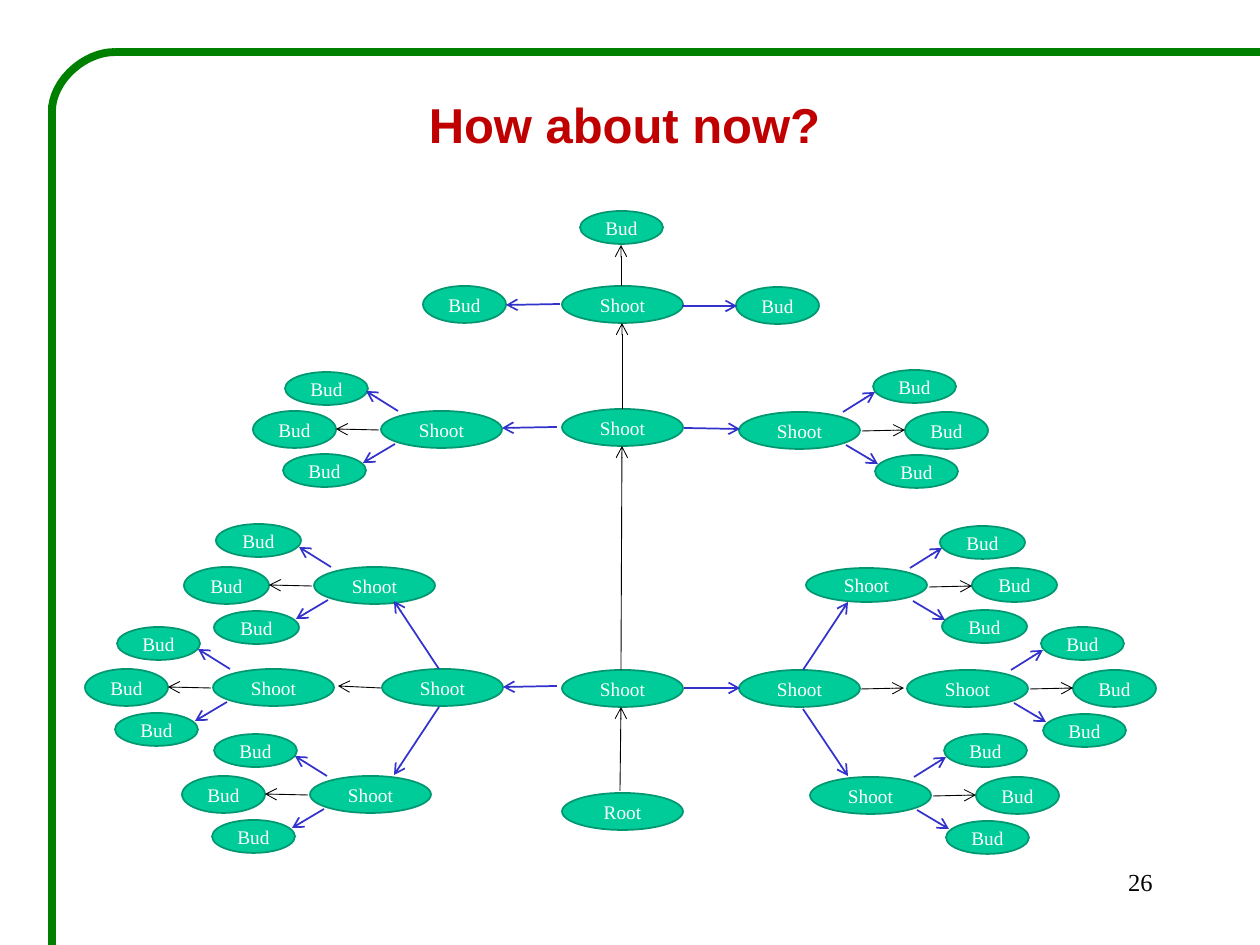
import pptx
import pptx.util
import pptx.dml.color
import pptx.enum.shapes
import pptx.enum.text
import pptx.oxml.ns
from lxml import etree

PX = 914400 / 126

THEME = {
    "node": "00CC99", "node_line": "009771", "node_text": "FFFFFF",
    "stem": "000000", "branch": "3333CC", "frame": "008000",
    "title": "C00000", "number": "000000",
    "sans": "Arial", "serif": "Times New Roman",
    "title_size": 28, "node_size": 11, "number_size": 14,
    "stem_width": 0.5, "branch_width": 1, "frame_width": 4.5,
}

# Content: nodes as label, left, top, width, height
NODES = [
    ("Bud", 580, 211, 83, 33),
    ("Bud", 423, 286, 83, 37),
    ("Shoot", 562, 286, 121, 37),
    ("Bud", 736, 287, 83, 37),
    ("Shoot", 562, 409, 121, 37),
    ("Shoot", 382, 669, 121, 37),
    ("Shoot", 562, 670, 121, 37),
    ("Shoot", 739, 670, 121, 37),
    ("Root", 562, 793, 121, 37),
]

# Arrows between those nodes: from x, from y, to x, to y
STEMS = [
    (621, 286, 621, 245),
    (622, 409, 622, 323),
    (621, 670, 622, 446),
    (620, 791, 621, 707),
    (861, 689, 904, 688),
    (381, 688, 338, 686),
]
BRANCHES = [
    (560, 304, 506, 305), (682, 306, 737, 306),
    (557, 427, 502, 428), (684, 428, 740, 429),
    (557, 686, 503, 687), (684, 688, 740, 688),
    (803, 670, 848, 602), (803, 709, 848, 776),
    (439, 669, 394, 601), (439, 707, 394, 775),
]

# Shoots with three buds: inner edge, top, direction, height,
# bud width, upper bud offset, lower bud offset
CLUSTERS = [
    (739, 412, 1, 37, 83, -42, 43),
    (806, 568, 1, 34, 85, -42, 42),
    (907, 670, 1, 37, 83, -43, 44),
    (810, 777, 1, 37, 83, -43, 44),
    (502, 411, -1, 37, 83, -39, 43),
    (435, 567, -1, 37, 85, -43, 44),
    (334, 669, -1, 37, 83, -42, 44),
    (431, 776, -1, 37, 83, -42, 44),
]


def emu(*lengths):
    return [round(length * PX) for length in lengths]


def rgb(name):
    return pptx.dml.color.RGBColor.from_string(THEME[name])


def write(shape, text, size, face, color, align, anchor, bold=False):
    frame = shape.text_frame
    frame.vertical_anchor = anchor
    para = frame.paragraphs[0]
    para.text = text
    para.alignment = align
    para.font.size = pptx.util.Pt(THEME[size])
    para.font.name = THEME[face]
    para.font.bold = bold
    para.font.color.rgb = rgb(color)
    return frame


def add_node(page, label, left, top, width, height):
    node = page.shapes.add_shape(
        pptx.enum.shapes.MSO_SHAPE.OVAL, *emu(left, top, width, height))
    node.shadow.inherit = False
    node.fill.solid()
    node.fill.fore_color.rgb = rgb("node")
    node.line.color.rgb = rgb("node_line")
    node.line.width = pptx.util.Pt(1)
    frame = write(node, label, "node_size", "serif", "node_text",
                  pptx.enum.text.PP_ALIGN.CENTER, pptx.enum.text.MSO_ANCHOR.MIDDLE)
    frame.word_wrap = False
    frame.margin_left = frame.margin_right = 0
    frame.margin_top = frame.margin_bottom = 0


def add_line(page, ends, style, arrow=True):
    line = page.shapes.add_connector(
        pptx.enum.shapes.MSO_CONNECTOR.STRAIGHT, *emu(*ends))
    line.line.color.rgb = rgb(style)
    line.line.width = pptx.util.Pt(THEME[style + "_width"])
    properties = line._element.spPr
    if arrow:
        etree.SubElement(properties.find(pptx.oxml.ns.qn("a:ln")),
                         pptx.oxml.ns.qn("a:tailEnd"), type="arrow")
    etree.SubElement(properties, pptx.oxml.ns.qn("a:effectLst"))
    return line


def add_cluster(page, inner, top, side, height, bud_width, upper, lower):
    def across(distance):
        return inner + side * distance

    def add_outward(label, start, y, width, tall):
        left = min(across(start), across(start + width))
        add_node(page, label, left, y, width, tall)

    add_outward("Shoot", 0, top, 121, height)
    for start, offset, tall in [(134, upper, 33), (166, 0, height), (136, lower, 33)]:
        add_outward("Bud", start, top + offset, bud_width, tall)
    for x1, y1, x2, y2, style in [(104, 0, 136, -20, "branch"),
                                  (123, 19, 166, 18, "stem"),
                                  (107, 33, 139, 52, "branch")]:
        add_line(page, (across(x1), top + y1, across(x2), top + y2), style)


def add_text(page, place, *text_style, **options):
    box = page.shapes.add_textbox(*emu(*place))
    write(box, *text_style, **options).word_wrap = True


def main():
    deck = pptx.Presentation()
    deck.slide_width, deck.slide_height = emu(1260, 945)
    page = deck.slides.add_slide(deck.slide_layouts[6])

    # Frame with a rounded corner
    add_line(page, (1260, 52, 115, 52), "frame", arrow=False)
    add_line(page, (52, 105, 52, 945), "frame", arrow=False)
    corner = add_line(page, (54, 50, 113, 113), "frame", arrow=False)
    corner._element.spPr.find(pptx.oxml.ns.qn("a:prstGeom")).set(
        "prst", "curvedConnector2")
    corner._element.spPr.find(pptx.oxml.ns.qn("a:xfrm")).set("rot", "16200000")

    # Title
    add_text(page, (372, 45, 505, 158), "How about now?", "title_size", "sans",
             "title", pptx.enum.text.PP_ALIGN.CENTER,
             pptx.enum.text.MSO_ANCHOR.MIDDLE, bold=True)

    # Plant
    for node in NODES:
        add_node(page, *node)
    for cluster in CLUSTERS:
        add_cluster(page, *cluster)
    for style, arrows in [("stem", STEMS), ("branch", BRANCHES)]:
        for ends in arrows:
            add_line(page, ends, style)

    # Page number
    add_text(page, (903, 861, 262, 63), "26", "number_size", "serif", "number",
             pptx.enum.text.PP_ALIGN.RIGHT, pptx.enum.text.MSO_ANCHOR.TOP)

    deck.save("out.pptx")


if __name__ == "__main__":
    main()
